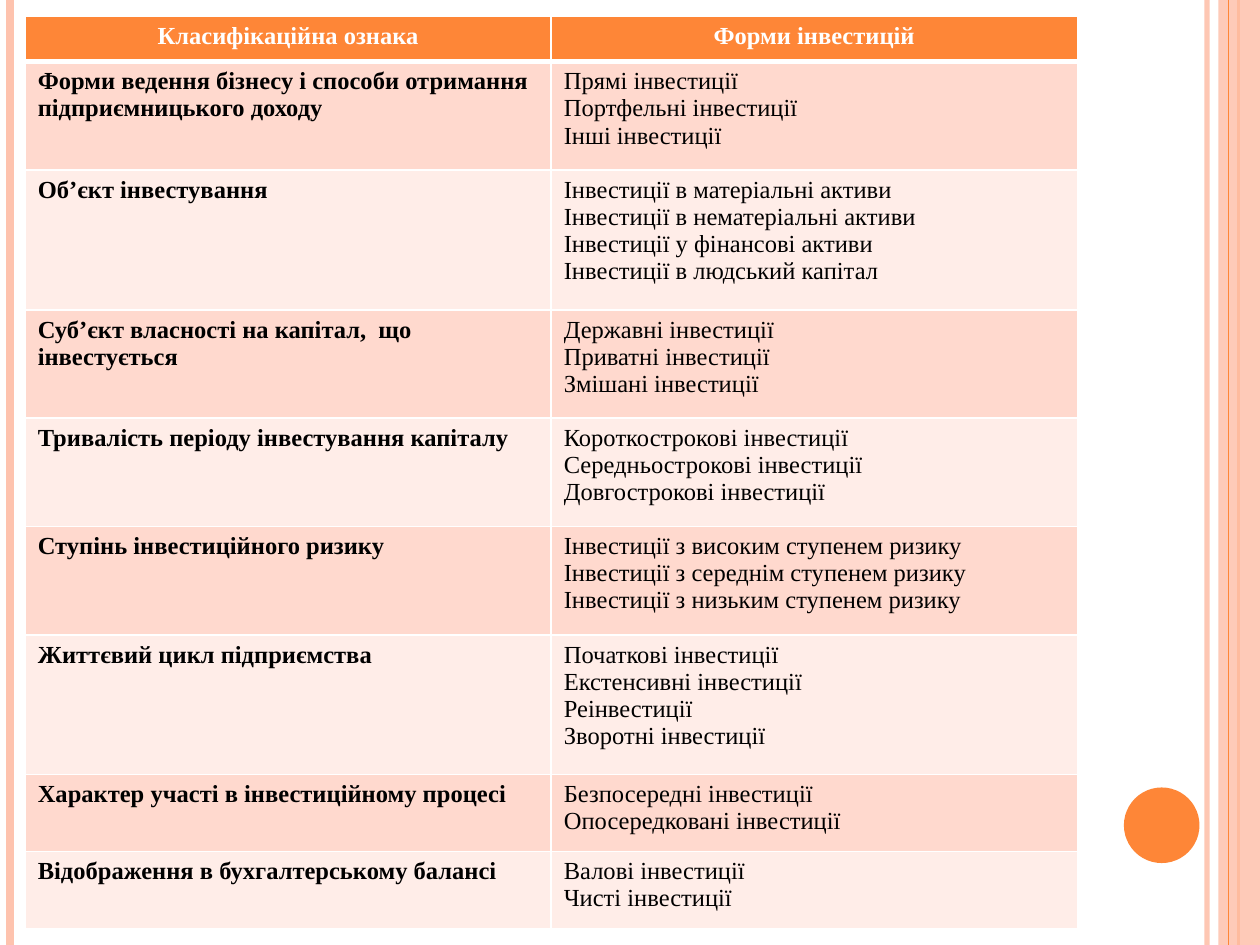
from lxml.etree import SubElement
from pptx import Presentation
from pptx.dml.color import RGBColor
from pptx.enum.shapes import MSO_CONNECTOR as CONN, MSO_SHAPE as SHAPE
from pptx.enum.text import PP_ALIGN as ALIGN
from pptx.oxml.ns import qn
from pptx.util import Inches, Pt

ORANGE = RGBColor(0xFE, 0x86, 0x37)
PEACH = RGBColor(0xFE, 0xC3, 0xAE)
BAND_DARK = RGBColor(0xFF, 0xD9, 0xCE)
BAND_LIGHT = RGBColor(0xFF, 0xED, 0xE8)
WHITE = RGBColor(0xFF, 0xFF, 0xFF)
BLACK = RGBColor(0, 0, 0)

HEADER = ("Класифікаційна ознака", "Форми інвестицій")
CLASSES = [
    ("Форми ведення бізнесу і способи отримання підприємницького доходу",
     ["Прямі інвестиції", "Портфельні інвестиції", "Інші інвестиції"]),
    ("Об’єкт інвестування",
     ["Інвестиції в матеріальні активи", "Інвестиції в нематеріальні активи",
      "Інвестиції у фінансові активи", "Інвестиції в людський капітал"]),
    ("Суб’єкт власності на капітал,  що інвестується",
     ["Державні інвестиції", "Приватні інвестиції", "Змішані інвестиції"]),
    ("Тривалість періоду інвестування капіталу",
     ["Короткострокові інвестиції", "Середньострокові інвестиції",
      "Довгострокові інвестиції"]),
    ("Ступінь інвестиційного ризику",
     ["Інвестиції з високим ступенем ризику",
      "Інвестиції з середнім ступенем ризику",
      "Інвестиції з низьким ступенем ризику"]),
    ("Життєвий цикл підприємства",
     ["Початкові інвестиції", "Екстенсивні інвестиції", "Реінвестиції",
      "Зворотні інвестиції"]),
    ("Характер участі в інвестиційному процесі",
     ["Безпосередні інвестиції", "Опосередковані інвестиції"]),
    ("Відображення в бухгалтерському балансі",
     ["Валові інвестиції", "Чисті інвестиції"]),
]


def write(tf, lines, size=14, font="Times New Roman", color=BLACK, bold=False,
          align=ALIGN.LEFT):
    """Put each line in its own paragraph."""
    for i, line in enumerate(lines):
        p = tf.paragraphs[0] if i == 0 else tf.add_paragraph()
        p.alignment = align
        r = p.add_run()
        r.text = line
        r.font.size, r.font.name = Pt(size), font
        r.font.bold, r.font.color.rgb = bold, color


def set_alpha(parent, percent):
    color = next(parent.iter(qn("a:srgbClr")))
    SubElement(color, qn("a:alpha"), val=str(percent * 1000))


def set_borders(cell, color, **widths):
    """Give border widths in points, by side: L, R, T, B."""
    tc_pr = cell._tc.get_or_add_tcPr()
    for side, width in widths.items():
        ln = SubElement(tc_pr, qn(f"a:ln{side}"), w=str(Pt(width)))
        fill = SubElement(ln, qn("a:solidFill"))
        SubElement(fill, qn("a:srgbClr"), val=str(color))


class Slide:
    def __init__(self, prs):
        self.prs = prs
        self.s = prs.slides.add_slide(prs.slide_layouts[6])
        self.s.background.fill.solid()
        self.s.background.fill.fore_color.rgb = WHITE

    def stripe(self, x, color, width, alpha=None):
        """Draw a vertical line over the full slide height."""
        line = self.s.shapes.add_connector(
            CONN.STRAIGHT, Inches(x), 0, Inches(x), self.prs.slide_height)
        line.line.color.rgb = color
        line.line.width = Pt(width)
        sp_pr = line._element.spPr
        if alpha:
            set_alpha(sp_pr, alpha)
        SubElement(sp_pr, qn("a:effectLst"))

    def shape(self, kind, x, y, w, h, color, alpha=None):
        sp = self.s.shapes.add_shape(kind, *map(Inches, (x, y, w, h)))
        sp.shadow.inherit = False
        sp.fill.solid()
        sp.fill.fore_color.rgb = color
        sp.line.fill.background()
        if alpha:
            set_alpha(sp._element.spPr, alpha)

    def cell(self, cell, lines, fill, bottom=1, top=1, **style):
        set_borders(cell, WHITE, L=1, R=1, T=top, B=bottom)
        cell.fill.solid()
        cell.fill.fore_color.rgb = fill
        write(cell.text_frame, lines, **style)

    def table(self, x, y, w, header, rows):
        heights = [0.11 + 0.25 * n for n in [1] + [len(f) for _, f in rows]]
        table = self.s.shapes.add_table(
            len(heights), len(header), Inches(x), Inches(y), Inches(w),
            Inches(sum(heights))).table
        for row, height in zip(table.rows, heights):
            row.height = Inches(height)
        for col, title in enumerate(header):
            self.cell(table.cell(0, col), [title], ORANGE, bottom=3,
                      color=WHITE, bold=True, align=ALIGN.CENTER)
        for i, (feature, forms) in enumerate(rows, 1):
            fill = BAND_DARK if i % 2 else BAND_LIGHT
            top = 3 if i == 1 else 1
            self.cell(table.cell(i, 0), [feature], fill, top=top, bold=True)
            self.cell(table.cell(i, 1), forms, fill, top=top)


def main():
    prs = Presentation()
    prs.slide_width, prs.slide_height = Inches(10), Inches(7.5)
    s = Slide(prs)
    s.stripe(9.58, PEACH, 3, alpha=93)
    s.stripe(0.08, PEACH, 4.5)
    s.stripe(9.83, ORANGE, 1.5)
    s.shape(SHAPE.RECTANGLE, 9.67, 0, 0.33, 7.5, PEACH, alpha=87)
    s.stripe(9.75, ORANGE, 0.75)
    s.shape(SHAPE.OVAL, 8.92, 6.25, 0.6, 0.6, ORANGE)
    s.table(0.2, 0.13, 8.35, HEADER, CLASSES)
    prs.save("out.pptx")


if __name__ == "__main__":
    main()
